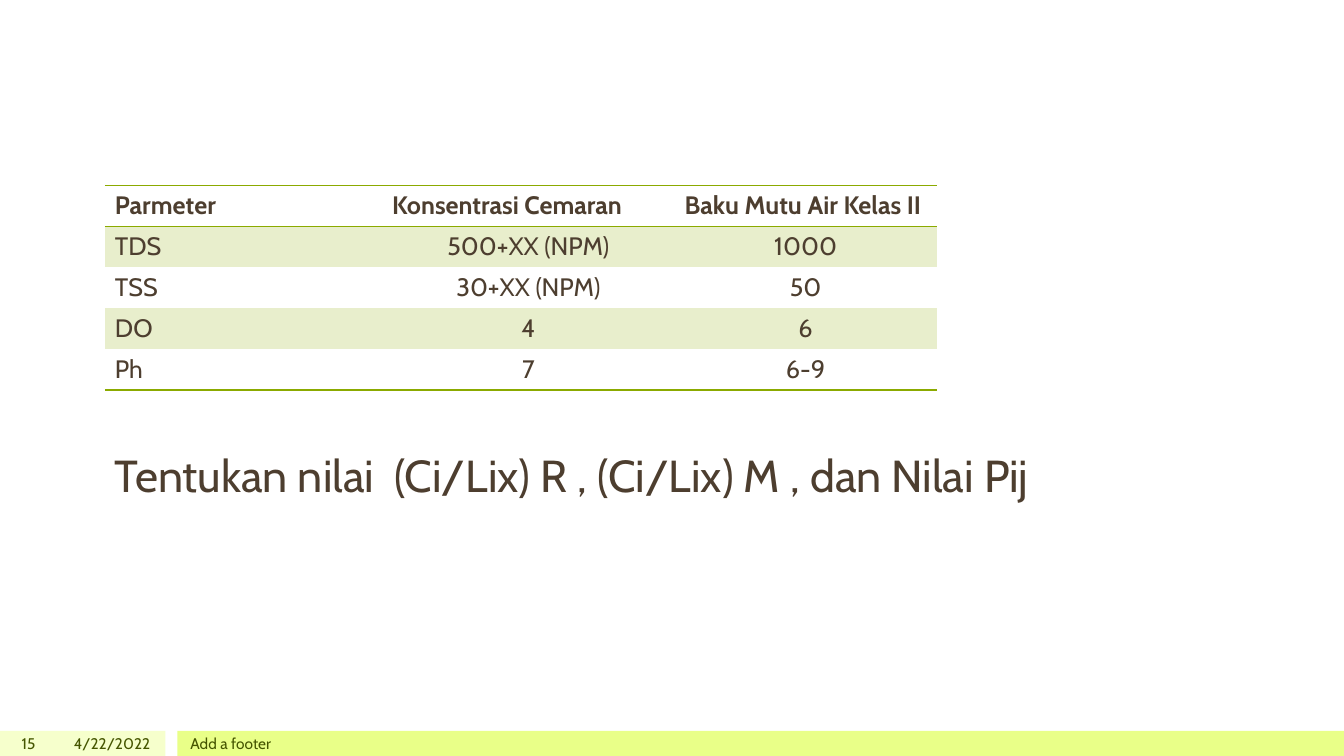
from dataclasses import dataclass

from lxml.etree import SubElement
from pptx import Presentation
from pptx.dml.color import RGBColor
from pptx.enum.shapes import MSO_SHAPE
from pptx.enum.text import MSO_ANCHOR, PP_ALIGN
from pptx.oxml import parse_xml
from pptx.oxml.ns import nsdecls, qn
from pptx.slide import Slide
from pptx.table import _Cell
from pptx.text.text import TextFrame
from pptx.util import Inches, Pt

FONT = "Cabin"
BROWN = "4D3E2F"
OLIVE = "455500"
GREEN = "8BAA00"
PALE_GREEN = "E8EECC"
PLAIN_TABLE_STYLE = "{2D5ABB26-0587-4C30-8999-92F81FD0307C}"

FOOTER_TOP, FOOTER_HEIGHT = 7.25, 0.25
CONTENT_LEFT = 1.04
ROW_HEIGHT = 0.406
COLUMN_WIDTHS = (2.75, 2.9, 2.6)
ROWS = (
    ("Parmeter", "Konsentrasi Cemaran", "Baku Mutu Air Kelas II"),
    ("TDS", "500+XX (NPM)", "1000"),
    ("TSS", "30+XX (NPM)", "50"),
    ("DO", "4", "6"),
    ("Ph", "7", "6-9"),
)


@dataclass(frozen=True)
class FooterBand:
    left: float
    width: float
    color: str


@dataclass(frozen=True)
class FooterText:
    text: str
    left: float
    width: float
    align: PP_ALIGN


FOOTER_BANDS = (FooterBand(0, 1.64, "F6FFCC"), FooterBand(1.76, 11.57, "E9FF88"))
FOOTER_TEXTS = (
    FooterText("15", 0, 0.45, PP_ALIGN.RIGHT),
    FooterText("4/22/2022", 0.5, 1.09, PP_ALIGN.RIGHT),
    FooterText("Add a footer", 1.79, 10, PP_ALIGN.LEFT),
)


def color_of(value: str) -> RGBColor:
    return RGBColor.from_string(value)


def write_text(frame: TextFrame, text: str, *, size: float, color: str = BROWN,
               bold: bool = False, align: PP_ALIGN = PP_ALIGN.LEFT) -> None:
    para = frame.paragraphs[0]
    para.alignment = align
    span = para.add_run()
    span.text = text
    span.font.name = FONT
    span.font.size = Pt(size)
    span.font.bold = bold
    span.font.color.rgb = color_of(color)


def add_text_frame(page: Slide, left: float, top: float,
                   width: float, height: float) -> TextFrame:
    box = page.shapes.add_textbox(Inches(left), Inches(top), Inches(width), Inches(height))
    box.text_frame.word_wrap = True
    return box.text_frame


def add_footer_band(page: Slide, band: FooterBand) -> None:
    box = page.shapes.add_shape(
        MSO_SHAPE.RECTANGLE, Inches(band.left), Inches(FOOTER_TOP),
        Inches(band.width), Inches(FOOTER_HEIGHT))
    box.shadow.inherit = False
    box.fill.solid()
    box.fill.fore_color.rgb = color_of(band.color)
    box.line.fill.background()


def add_footer_text(page: Slide, item: FooterText) -> None:
    frame = add_text_frame(page, item.left, FOOTER_TOP, item.width, FOOTER_HEIGHT)
    frame.vertical_anchor = MSO_ANCHOR.MIDDLE
    write_text(frame, item.text, size=11, color=OLIVE, align=item.align)


def add_borders(cell: _Cell, sides: str) -> None:
    """Rule the given sides, listed in schema order (T before B), ahead of the fill."""
    properties = cell._tc.get_or_add_tcPr()
    for position, side in enumerate(sides):
        line = parse_xml(f'<a:ln{side} {nsdecls("a")} w="{Pt(1)}"/>')
        fill = SubElement(line, qn("a:solidFill"))
        SubElement(fill, qn("a:srgbClr"), val=GREEN)
        properties.insert(position, line)


def add_parameter_table(page: Slide) -> None:
    frame = page.shapes.add_table(
        len(ROWS), len(COLUMN_WIDTHS), Inches(CONTENT_LEFT), Inches(1.84),
        Inches(sum(COLUMN_WIDTHS)), Inches(ROW_HEIGHT * len(ROWS)))
    table = frame.table
    table._tbl.tblPr.find(qn("a:tableStyleId")).text = PLAIN_TABLE_STYLE
    for column, width in zip(table.columns, COLUMN_WIDTHS):
        column.width = Inches(width)

    borders = {0: "TB", len(ROWS) - 1: "B"}
    for row_index, row in enumerate(ROWS):
        table.rows[row_index].height = Inches(ROW_HEIGHT)
        is_header = row_index == 0
        for column_index, text in enumerate(row):
            cell = table.cell(row_index, column_index)
            if row_index % 2:
                cell.fill.solid()
                cell.fill.fore_color.rgb = color_of(PALE_GREEN)
            else:
                cell.fill.background()
            add_borders(cell, borders.get(row_index, ""))
            is_left = is_header or column_index == 0
            write_text(cell.text_frame, text, size=18, bold=is_header,
                       align=PP_ALIGN.LEFT if is_left else PP_ALIGN.CENTER)


def main() -> None:
    deck = Presentation()
    deck.slide_width, deck.slide_height = Inches(13.33), Inches(7.5)
    page = deck.slides.add_slide(deck.slide_layouts[6])
    for band in FOOTER_BANDS:
        add_footer_band(page, band)
    for item in FOOTER_TEXTS:
        add_footer_text(page, item)
    add_parameter_table(page)
    task = add_text_frame(page, CONTENT_LEFT, 4.39, 9.51, 0.64)
    write_text(task, "Tentukan nilai  (Ci/Lix) R , (Ci/Lix) M , dan Nilai Pij", size=32)
    deck.save("out.pptx")


if __name__ == "__main__":
    main()
